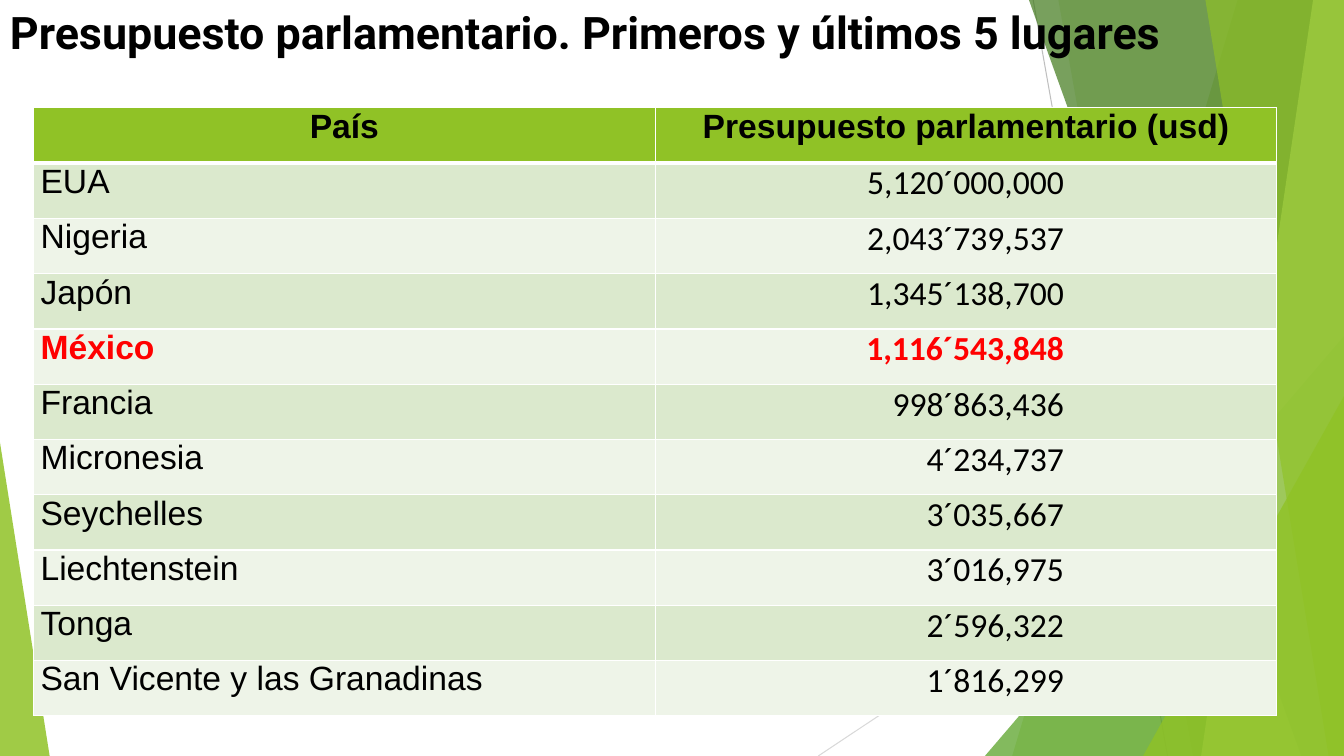
from dataclasses import dataclass

import lxml.etree
import pptx
import pptx.dml.color
import pptx.enum.shapes
import pptx.enum.text
import pptx.oxml.ns
import pptx.shapes.autoshape
import pptx.slide
import pptx.table
import pptx.text.text
import pptx.util

Pt = pptx.util.Pt
qn = pptx.oxml.ns.qn
ALIGN = pptx.enum.text.PP_ALIGN

WIDE, HIGH = 960, 540
COLORS = {
    "white": "FFFFFF", "black": "000000", "red": "FF0000",
    "gray": "BFBFBF", "silver": "D9D9D9",
    "lime": "90C226", "green": "54A021", "forest": "3F7819", "pale": "C0E474",
    "odd": "DBE9CD", "even": "EEF4E8",
}


@dataclass
class Ray:
    x1: float
    y1: float
    x2: float
    y2: float
    color: str


@dataclass
class Band:
    """A facet running from the slide's top to its bottom, up to the right edge."""
    top: float
    base: float
    color: str
    alpha: int


@dataclass
class Wedge:
    left: float
    top: float
    width: float
    peak: float
    color: str
    alpha: int


@dataclass
class Entry:
    land: str
    budget: str
    marked: bool = False


RAYS = [
    Ray(738, 0, 834, HIGH, "gray"),
    Ray(WIDE, 290, 584.5, HIGH, "silver"),
]
FACETS = [
    Band(884, 723, "lime", 30),
    Band(756, 852, "lime", 20),
    Wedge(703.5, 240, 256.5, 1, "green", 72),
    Band(735, 929.5, "forest", 70),
    Band(938, 858, "pale", 70),
    Band(861, 949, "lime", 65),
    Wedge(816.5, 283, 143.5, 1, "lime", 80),
    Wedge(0, 316, 35.5, 0, "lime", 85),
]
HEADS = ["País", "Presupuesto parlamentario (usd)"]
ENTRIES = [
    Entry("EUA", "5,120´000,000"),
    Entry("Nigeria", "2,043´739,537"),
    Entry("Japón", "1,345´138,700"),
    Entry("México", "1,116´543,848", True),
    Entry("Francia", "998´863,436"),
    Entry("Micronesia", "4´234,737"),
    Entry("Seychelles", "3´035,667"),
    Entry("Liechtenstein", "3´016,975"),
    Entry("Tonga", "2´596,322"),
    Entry("San Vicente y las Granadinas", "1´816,299"),
]


def rgb(name: str) -> pptx.dml.color.RGBColor:
    return pptx.dml.color.RGBColor.from_string(COLORS[name])


def add_run(para: pptx.text.text._Paragraph, text: str, face: str, size: float,
            color: str = "black", bold: bool = False) -> None:
    run = para.add_run()
    run.text = text
    run.font.name, run.font.size, run.font.bold = face, Pt(size), bold
    run.font.color.rgb = rgb(color)


def draw_ray(slide: pptx.slide.Slide, ray: Ray) -> None:
    line = slide.shapes.add_connector(
        pptx.enum.shapes.MSO_CONNECTOR.STRAIGHT,
        Pt(ray.x1), Pt(ray.y1), Pt(ray.x2), Pt(ray.y2))
    line.line.color.rgb = rgb(ray.color)
    line.line.width = Pt(0.75)
    lxml.etree.SubElement(line.element.spPr, qn("a:effectLst"))


def paint(shape: pptx.shapes.autoshape.Shape, color: str, alpha: int) -> None:
    """Fill the shape at the given opacity in percent, with no outline."""
    shape.shadow.inherit = False
    shape.line.fill.background()
    shape.fill.solid()
    shape.fill.fore_color.rgb = rgb(color)
    tint = shape.element.spPr.find(".//" + qn("a:srgbClr"))
    lxml.etree.SubElement(tint, qn("a:alpha"), val=str(alpha * 1000))


def draw_facet(slide: pptx.slide.Slide, facet: Band | Wedge) -> None:
    if isinstance(facet, Band):
        pen = slide.shapes.build_freeform(Pt(facet.top), 0)
        pen.add_line_segments([(Pt(WIDE), 0), (Pt(WIDE), Pt(HIGH)),
                               (Pt(facet.base), Pt(HIGH))])
        shape = pen.convert_to_shape()
    else:
        shape = slide.shapes.add_shape(
            pptx.enum.shapes.MSO_SHAPE.ISOSCELES_TRIANGLE,
            Pt(facet.left), Pt(facet.top), Pt(facet.width), Pt(HIGH - facet.top))
        shape.adjustments[0] = facet.peak
    paint(shape, facet.color, facet.alpha)


def draw_title(slide: pptx.slide.Slide, text: str) -> None:
    box = slide.shapes.add_textbox(0, 0, Pt(WIDE), Pt(152))
    box.text_frame.word_wrap = True
    add_run(box.text_frame.paragraphs[0], text, "Roboto", 32, bold=True)


def style_cell(cell: pptx.table._Cell, fill: str, base: float) -> None:
    """Set margins, white borders (the bottom one of width base) and fill."""
    cell.margin_left = cell.margin_right = Pt(5)
    cell.margin_top = cell.margin_bottom = 0
    props = cell._tc.get_or_add_tcPr()
    for side, width in (("L", 1), ("R", 1), ("T", 1), ("B", base)):
        edge = lxml.etree.SubElement(props, qn(f"a:ln{side}"), w=str(Pt(width)))
        solid = lxml.etree.SubElement(edge, qn("a:solidFill"))
        lxml.etree.SubElement(solid, qn("a:srgbClr"), val=COLORS["white"])
    cell.fill.solid()
    cell.fill.fore_color.rgb = rgb(fill)


def draw_table(slide: pptx.slide.Slide) -> None:
    count = len(ENTRIES) + 1
    table = slide.shapes.add_table(
        count, 2, Pt(24), Pt(77), Pt(888), Pt(39.5 * count)).table
    for col, text in enumerate(HEADS):
        cell = table.cell(0, col)
        style_cell(cell, "lime", 3)
        para = cell.text_frame.paragraphs[0]
        para.alignment = ALIGN.CENTER
        add_run(para, text, "Arial", 24, bold=True)
    for row, entry in enumerate(ENTRIES, 1):
        color = "red" if entry.marked else "black"
        pairs = ((entry.land, "Arial"), (entry.budget, "Calibri"))
        for col, (text, face) in enumerate(pairs):
            cell = table.cell(row, col)
            style_cell(cell, "odd" if row % 2 else "even", 1)
            para = cell.text_frame.paragraphs[0]
            if col == 1:
                cell.margin_right = Pt(152)
                para.alignment = ALIGN.RIGHT
            add_run(para, text, face, 24, color, entry.marked)


def main() -> None:
    deck = pptx.Presentation()
    deck.slide_width, deck.slide_height = Pt(WIDE), Pt(HIGH)
    slide = deck.slides.add_slide(deck.slide_layouts[6])
    for ray in RAYS:
        draw_ray(slide, ray)
    for facet in FACETS:
        draw_facet(slide, facet)
    draw_title(slide, "Presupuesto parlamentario. Primeros y últimos 5 lugares")
    draw_table(slide)
    deck.save("out.pptx")


if __name__ == "__main__":
    main()
